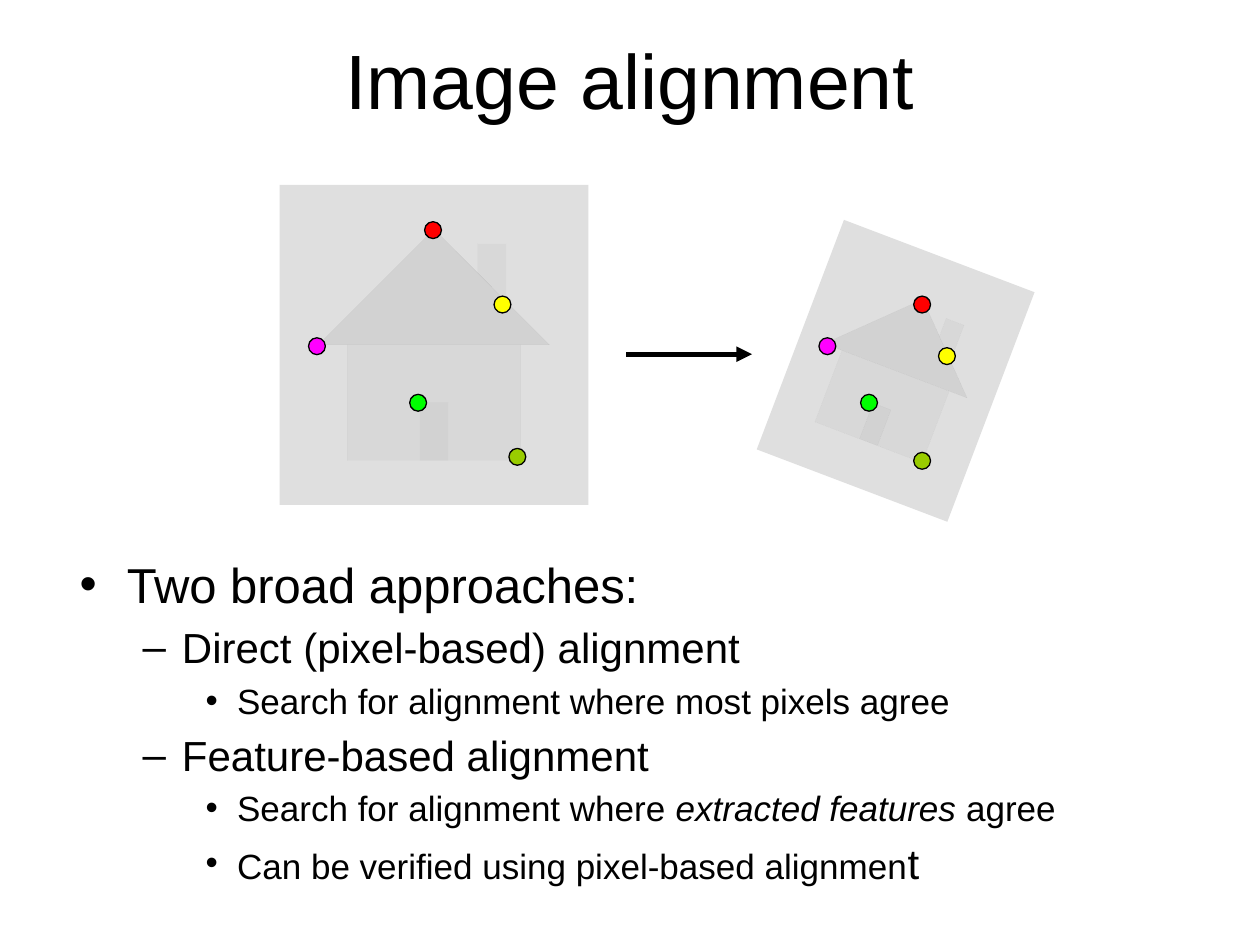
import pptx
import pptx.dml.color
import pptx.enum.shapes
import pptx.enum.text
import pptx.oxml
import pptx.oxml.ns
import pptx.util
from lxml import etree

Cm = pptx.util.Cm
Pt = pptx.util.Pt
SHAPES = pptx.enum.shapes.MSO_SHAPE


def colour(value):
    return pptx.dml.color.RGBColor.from_string(value)


def add_element(parent, tag, **attributes):
    return etree.SubElement(parent, pptx.oxml.ns.qn(tag), attributes)


class SlideBuilder:
    font = "Arial"
    ink = "000000"
    dot_size = 0.34
    level_sizes = (28, 24, 20)

    def __init__(self, page):
        self.page = page

    def place(self, box, left, top, width, height):
        box.left, box.top = Cm(left), Cm(top)
        box.width, box.height = Cm(width), Cm(height)
        box.text_frame.auto_size = pptx.enum.text.MSO_AUTO_SIZE.NONE

    def span(self, para, text, size, italic=False):
        span = para.add_run()
        span.text = text
        span.font.name = self.font
        span.font.size = Pt(size)
        span.font.italic = italic
        span.font.color.rgb = colour(self.ink)

    def title(self, text, *area):
        box = self.page.shapes.title
        self.place(box, *area)
        self.span(box.text_frame.paragraphs[0], text, 44)

    def bullets(self, items, *area):
        box = self.page.placeholders[1]
        self.place(box, *area)
        frame = box.text_frame
        for index, (level, spans) in enumerate(items):
            para = frame.add_paragraph() if index else frame.paragraphs[0]
            para.level = level
            for text, *style in spans:
                size, italic = style or (self.level_sizes[level], False)
                self.span(para, text, size, italic)

    def arrow(self, left, right, y):
        line = self.page.shapes.add_connector(
            pptx.enum.shapes.MSO_CONNECTOR.STRAIGHT, Cm(left), Cm(y), Cm(right), Cm(y))
        line.line.color.rgb = colour(self.ink)
        line.line.width = Pt(3)
        add_element(line.line._get_or_add_ln(), "a:tailEnd", type="triangle")
        add_element(line._element.spPr, "a:effectLst")

    def shape(self, kind, left, top, width, height, fill):
        shape = self.page.shapes.add_shape(kind, Cm(left), Cm(top), Cm(width), Cm(height))
        shape.shadow.inherit = False
        shape.fill.solid()
        shape.fill.fore_color.rgb = colour(fill)
        return shape

    def house(self, area, rotation=0):
        house = self.shape(SHAPES.ACTION_BUTTON_HOME, *area, "808080")
        house.rotation = rotation
        house.line.fill.background()
        fill = house._element.spPr.find(pptx.oxml.ns.qn("a:solidFill"))
        add_element(fill[0], "a:alpha", val="25000")

    def dot(self, left, top, fill):
        dot = self.shape(SHAPES.OVAL, left, top, self.dot_size, self.dot_size, fill)
        dot.line.color.rgb = colour(self.ink)
        dot.line.width = Pt(0.75)


FEATURES = ("FF0000", "99CC00", "00FF00", "FF00FF", "FFFF00")
VIEWS = (
    ((5.64, 3.73, 6.22, 6.45), 0,
     ((8.56, 4.47), (10.26, 9.04), (8.26, 7.95), (6.22, 6.81), (9.96, 5.97))),
    ((16, 5, 4.11, 4.95), 20.8,
     ((18.42, 5.97), (18.42, 9.12), (17.35, 7.95), (16.51, 6.81), (18.92, 7.01))),
)
APPROACHES = (
    (0, [("Two broad approaches:",)]),
    (1, [("Direct (pixel-based) alignment",)]),
    (2, [("Search for alignment where most pixels agree",)]),
    (1, [("Feature-based alignment",)]),
    (2, [("Search for alignment where ",), ("extracted features", 20, True), (" agree",)]),
    (2, [("Can be verified using pixel-based alignmen",), ("t", 24, False)]),
)


def main():
    deck = pptx.Presentation()
    deck.slide_width, deck.slide_height = Cm(25.4), Cm(19.05)
    builder = SlideBuilder(deck.slides.add_slide(deck.slide_layouts[1]))
    builder.title("Image alignment", 1.27, 0, 22.86, 3.18)
    builder.bullets(APPROACHES, 1.35, 11.05, 22.86, 12.57)
    builder.arrow(12.62, 15.16, 7.14)
    for area, rotation, points in VIEWS:
        builder.house(area, rotation)
        for point, fill in zip(points, FEATURES):
            builder.dot(*point, fill)
    deck.save("out.pptx")


if __name__ == "__main__":
    main()
